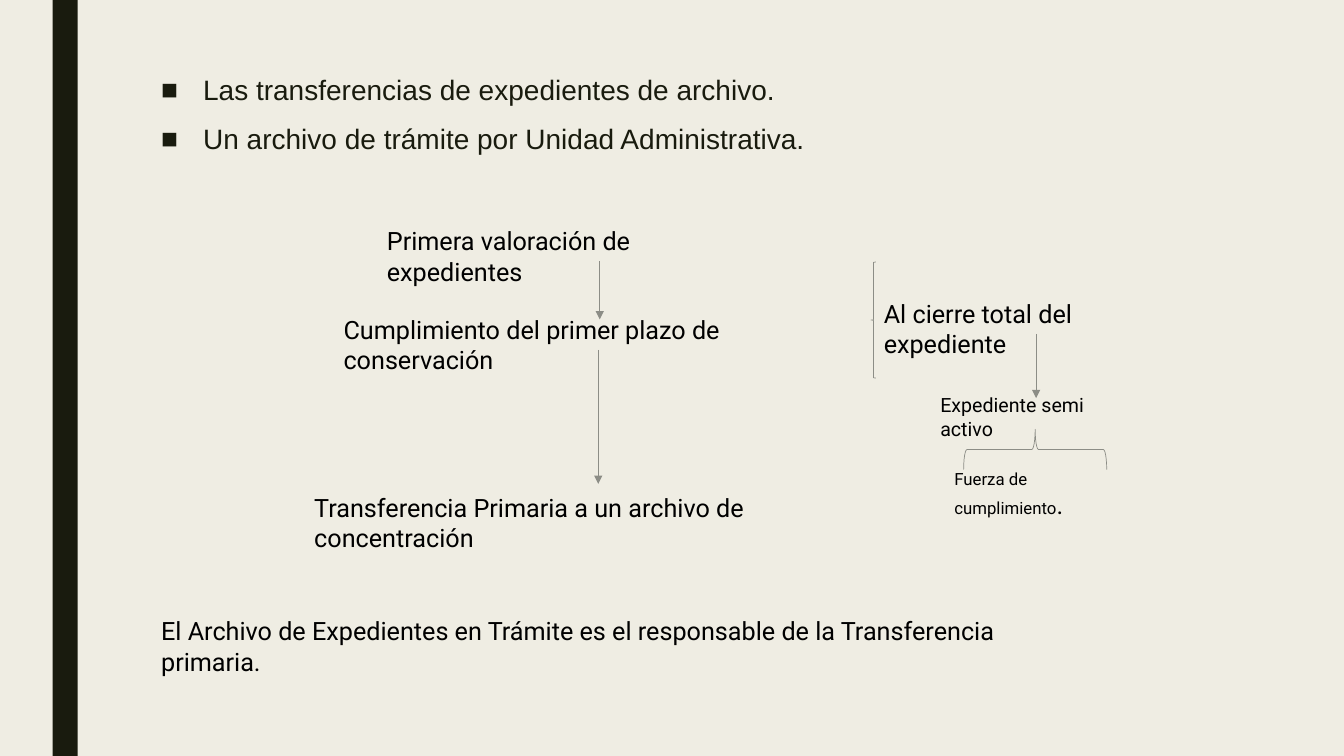
from lxml.etree import SubElement
from pptx import Presentation
from pptx.dml.color import RGBColor
from pptx.enum.shapes import MSO_CONNECTOR, MSO_SHAPE
from pptx.oxml.ns import qn
from pptx.util import Pt

COLORS = {"paper": "EFEDE3", "ink": "191B0E", "text": "000000", "line": "8C8D86"}


def color(name):
    return RGBColor.from_string(COLORS[name])


def style_run(run, font, size, color_name):
    run.font.name = font
    run.font.size = Pt(size)
    run.font.color.rgb = color(color_name)


deck = Presentation()
deck.slide_width, deck.slide_height = Pt(960), Pt(540)
page = deck.slides.add_slide(deck.slide_layouts[6])
page.background.fill.solid()
page.background.fill.fore_color.rgb = color("paper")

# Side band
band = page.shapes.add_shape(MSO_SHAPE.RECTANGLE, Pt(37.5), Pt(0), Pt(18), Pt(540))
band.shadow.inherit = False
band.fill.solid()
band.fill.fore_color.rgb = color("ink")
band.line.fill.background()

# Bulleted introduction
intro = page.shapes.add_textbox(Pt(108), Pt(50.4), Pt(832), Pt(412))
intro.text_frame.word_wrap = True
intro.text_frame.text = (
    "Las transferencias de expedientes de archivo.\n"
    "Un archivo de trámite por Unidad Administrativa."
)
for index, para in enumerate(intro.text_frame.paragraphs):
    para.line_spacing = 0.94
    para.space_before = Pt(10 if index else 0)
    para.space_after = Pt(2)
    properties = para._p.get_or_add_pPr()
    properties.set("marL", str(Pt(30)))
    properties.set("indent", str(Pt(-30)))
    SubElement(properties, qn("a:buFont"), typeface="Arial")
    SubElement(properties, qn("a:buChar"), char="■")
    style_run(para.runs[0], "Arial", 20, "ink")

# Steps of the transfer: left, top, width, height, size, text
steps = {
    "valuation": (269.3, 157.7, 278.6, 29, 18, "Primera valoración de expedientes"),
    "term": (238.3, 221, 378, 29, 18, "Cumplimiento del primer plazo de conservación"),
    "closing": (624.2, 209.5, 231.8, 29, 18, "Al cierre total del expediente"),
    "semiactive": (664.6, 277.2, 151.2, 24.5, 14, "Expediente semi activo"),
    "force": (674.6, 331.2, 141.8, 29, 12, "Fuerza de cumplimiento"),
    "transfer": (217.4, 347.8, 421.9, 29, 18,
                 "Transferencia Primaria a un archivo de concentración"),
    "owner": (108, 436.3, 663.1, 29, 18,
              "El Archivo de Expedientes en Trámite es el responsable "
              "de la Transferencia primaria."),
}
boxes = {}
for name, (left, top, width, height, size, text) in steps.items():
    box = page.shapes.add_textbox(Pt(left), Pt(top), Pt(width), Pt(height))
    box.text_frame.word_wrap = True
    box.text_frame.text = text
    style_run(box.text_frame.paragraphs[0].runs[0], "Roboto", size, "text")
    boxes[name] = box

full_stop = boxes["force"].text_frame.paragraphs[0].add_run()
full_stop.text = "."
style_run(full_stop, "Roboto", 18, "text")

# Arrows: x, start, end, box whose bottom the arrow leaves
arrows = [
    (428.4, 186.5, 228.2, None),
    (427.3, 250, 345.6, "term"),
    (740.1, 238.5, 284.4, "closing"),
]
for x, start, end, source in arrows:
    arrow = page.shapes.add_connector(
        MSO_CONNECTOR.STRAIGHT, Pt(x), Pt(start), Pt(x), Pt(end))
    if source:
        arrow.begin_connect(boxes[source], 2)
    arrow.line.color.rgb = color("line")
    arrow.line.width = Pt(0.5)
    SubElement(arrow.line._get_or_add_ln(), qn("a:tailEnd"), type="triangle")
    SubElement(arrow._element.spPr, qn("a:effectLst"))

# Braces: left, top, width, height, rotation
braces = [(622.1, 187.2, 3.6, 82.8, 0), (725, 270, 28.8, 102.2, 90)]
for left, top, width, height, rotation in braces:
    brace = page.shapes.add_shape(
        MSO_SHAPE.LEFT_BRACE, Pt(left), Pt(top), Pt(width), Pt(height))
    brace.rotation = rotation
    brace.shadow.inherit = False
    brace.fill.background()
    brace.line.color.rgb = color("line")
    brace.line.width = Pt(0.5)

deck.save("out.pptx")
